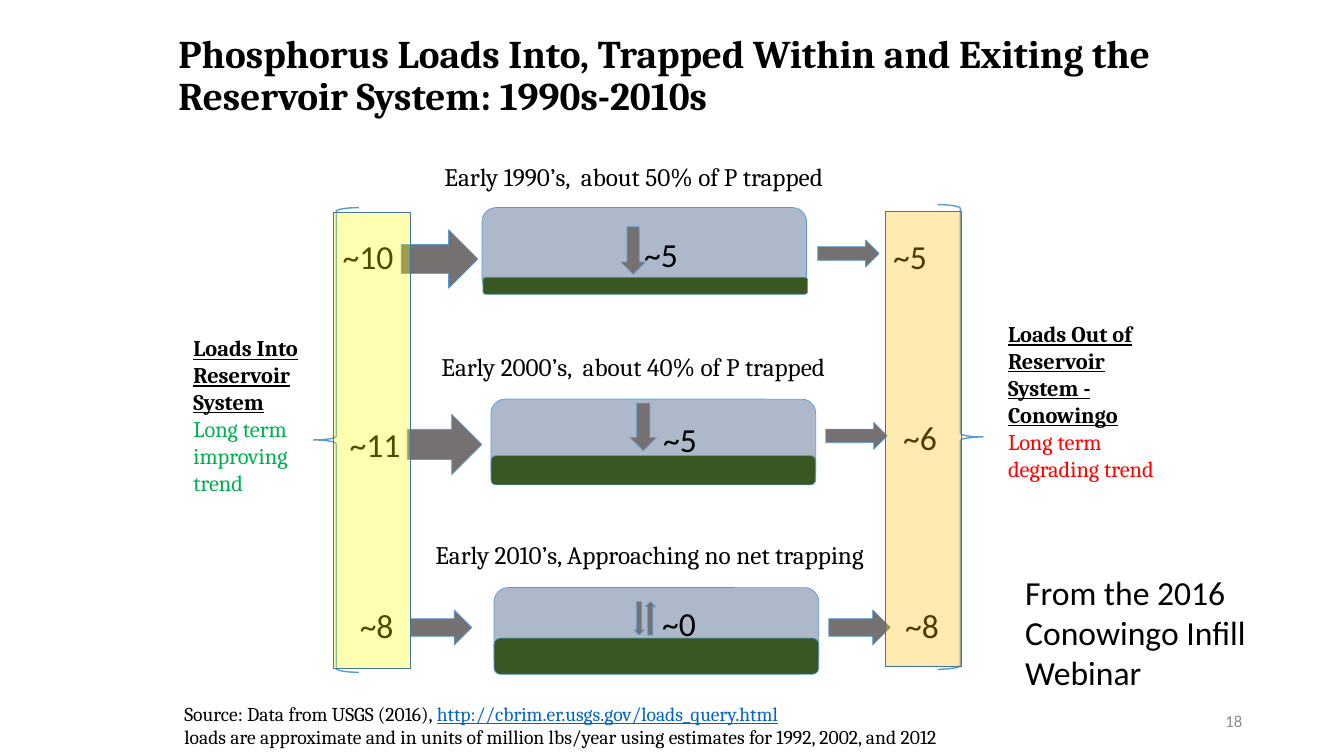
from lxml import etree
from pptx import Presentation
from pptx import util as u
from pptx.dml.color import RGBColor
from pptx.enum import shapes, text
from pptx.oxml.ns import qn

KIND = shapes.MSO_SHAPE
BLACK, GREY, BLUE = "000000", "767171", "5B9BD5"
WATER, SEDIMENT = "ADB9CA", "385723"
SERIF = {"name": "Cambria", "bold": False, "underline": False}
SANS = {"name": "Calibri"}
HEADING = {"bold": True, "underline": True}
BASIN_WIDTH, BASIN_HEIGHT = 3.22, 0.84

# Boxes are left, top, width, height, measured from the basin's top left corner.
STAGES = [
    {"at": (4.78, 2.06), "sediment": (0.01, 0.69, 3.22, 0.17),
     "caption": ("Early 1990’s,  about 50% of P trapped", (-0.47, -0.51, 4.39, 0.4)),
     "amounts": [("~10", (-1.48, 0.23, 0.71, 0.5)), ("~5", (1.51, 0.21, 0.54, 0.5)),
                 ("~5", (3.98, 0.23, 0.54, 0.5))],
     "arrows": [(KIND.RIGHT_ARROW, (-0.8, 0.22, 0.76, 0.58)),
                (KIND.DOWN_ARROW, (1.38, 0.19, 0.24, 0.47)),
                (KIND.RIGHT_ARROW, (3.33, 0.32, 0.61, 0.27))]},
    {"at": (4.87, 3.96), "sediment": (0, 0.56, 3.22, 0.29),
     "caption": ("Early 2000’s,  about 40% of P trapped", (-0.59, -0.52, 4.45, 0.4)),
     "amounts": [("~11", (-1.5, 0.2, 0.71, 0.5)), ("~5", (1.61, 0.15, 0.54, 0.5)),
                 ("~6", (3.99, 0.13, 0.54, 0.5))],
     "arrows": [(KIND.RIGHT_ARROW, (-0.83, 0.15, 0.74, 0.6)),
                (KIND.DOWN_ARROW, (1.38, 0.04, 0.26, 0.47)),
                (KIND.RIGHT_ARROW, (3.32, 0.23, 0.61, 0.27))]},
    {"at": (4.9, 5.83), "sediment": (0, 0.5, 3.22, 0.36),
     "caption": ("Early 2010’s, Approaching no net trapping", (-0.68, -0.53, 4.93, 0.4)),
     "amounts": [("~8", (-1.43, 0.12, 0.54, 0.5)), ("~0", (1.57, 0.1, 0.54, 0.5)),
                 ("~8", (3.98, 0.12, 0.54, 0.5))],
     "arrows": [(KIND.RIGHT_ARROW, (-0.83, 0.22, 0.61, 0.35)),
                (KIND.DOWN_ARROW, (1.39, 0.14, 0.1, 0.33)),
                (KIND.UP_ARROW, (1.5, 0.14, 0.1, 0.33)),
                (KIND.RIGHT_ARROW, (3.32, 0.22, 0.61, 0.35))]},
]


def colour(value):
    return RGBColor.from_string(value)


def lengths(box):
    return [u.Inches(value) for value in box]


def add_span(para, words, size, ink=BLACK, **formats):
    span = para.add_run()
    span.text = words
    span.font.size = u.Pt(size)
    span.font.color.rgb = colour(ink)
    for name, value in formats.items():
        setattr(span.font, name, value)


def add_text(page, box, paragraphs, size, wrap=False, **formats):
    """Add a text box; each paragraph is a list of (words, formats) spans."""
    frame = page.shapes.add_textbox(*lengths(box)).text_frame
    frame.word_wrap = wrap
    for index, spans in enumerate(paragraphs):
        para = frame.add_paragraph() if index else frame.paragraphs[0]
        for words, own in spans:
            add_span(para, words, size, **{**formats, **own})
    return frame


def add_figure(page, kind, box, fill=None, line=BLUE, width=0.5, opacity=None):
    figure = page.shapes.add_shape(kind, *lengths(box))
    figure.shadow.inherit = False
    figure.line.color.rgb = colour(line)
    figure.line.width = u.Pt(width)
    if fill is None:
        figure.fill.background()
        return
    figure.fill.solid()
    figure.fill.fore_color.rgb = colour(fill)
    if opacity:
        tint = figure.element.spPr.find(qn("a:solidFill"))[0]
        etree.SubElement(tint, qn("a:alpha")).set("val", str(opacity * 1000))


def add_title(page, box, words):
    title = page.shapes.title
    title.left, title.top, title.width, title.height = lengths(box)
    frame = title.text_frame
    frame.word_wrap = True
    frame.vertical_anchor = text.MSO_ANCHOR.MIDDLE
    para = frame.paragraphs[0]
    para.alignment = text.PP_ALIGN.LEFT
    para.line_spacing = 0.9
    add_span(para, words, 28, name="Cambria", bold=True)


def add_stage(page, stage):
    """Draw one period: its basin, sediment, flows and amounts."""
    left, top = stage["at"]

    def place(box):
        return (left + box[0], top + box[1], *box[2:])

    add_figure(page, KIND.ROUNDED_RECTANGLE, (left, top, BASIN_WIDTH, BASIN_HEIGHT), WATER)
    add_figure(page, KIND.ROUNDED_RECTANGLE, place(stage["sediment"]), SEDIMENT)
    for kind, box in stage["arrows"]:
        add_figure(page, kind, place(box), GREY)
    words, box = stage["caption"]
    add_text(page, place(box), [[(words, {})]], 18, **SERIF)
    for words, box in stage["amounts"]:
        add_text(page, place(box), [[(words, {})]], 24, **SANS)


def add_load_side(page, brace, brace_box, bar_box, tint, note_box, note):
    """Draw a brace, the tinted bar over the amounts and the note beside them."""
    add_figure(page, brace, brace_box, width=1)
    add_figure(page, KIND.RECTANGLE, bar_box, tint, "43739E", 1, opacity=30)
    add_text(page, note_box, note, 16, wrap=True, **SERIF)


def add_footer(page, left, top):
    source = [
        [("Source: Data from USGS (2016), ", {}),
         ("http://cbrim.er.usgs.gov/loads_query.html", {"ink": "0563C1", "underline": True}),
         (" ", {})],
        [("loads are approximate and in units of million lbs/year "
          "using estimates for 1992, 2002, and 2012", {})],
    ]
    add_text(page, (left, top, 8.46, 0.57), source, 14, **SERIF)
    number = add_text(page, (left + 7.69, top + 0.04, 3, 0.4),
                      [[("18", {"ink": "8C8C8C"})]], 12, wrap=True, **SANS)
    number.vertical_anchor = text.MSO_ANCHOR.MIDDLE
    number.paragraphs[0].alignment = text.PP_ALIGN.RIGHT


def main():
    deck = Presentation()
    deck.slide_width, deck.slide_height = u.Inches(13.33), u.Inches(7.5)
    page = deck.slides.add_slide(deck.slide_layouts[5])
    add_title(page, (1.67, 0.14, 9.98, 1.25),
              "Phosphorus Loads Into, Trapped Within and Exiting the Reservoir System: 1990s-2010s")
    for stage in STAGES:
        add_stage(page, stage)
    add_load_side(page, KIND.LEFT_BRACE, (3.11, 2.06, 0.45, 4.61),
                  (3.31, 2.11, 0.76, 4.52), "FFFF00", (1.82, 3.27, 1.37, 1.99),
                  [[("Loads Into Reservoir System", HEADING)],
                   [("Long term improving trend", {"ink": "00B050"})]])
    add_load_side(page, KIND.RIGHT_BRACE, (9.3, 2.03, 0.45, 4.61),
                  (8.78, 2.1, 0.76, 4.51), "FFC000", (9.9, 3.13, 1.71, 2.26),
                  [[("Loads Out of Reservoir System - Conowingo", HEADING), (" ", {}),
                    ("Long term degrading trend", {"ink": "FF0000"})]])
    add_text(page, (10.07, 5.62, 2.94, 1.31),
             [[("From the 2016 Conowingo Infill Webinar", {})]], 24, wrap=True, **SANS)
    add_footer(page, 1.73, 6.91)
    deck.save("out.pptx")


if __name__ == "__main__":
    main()
